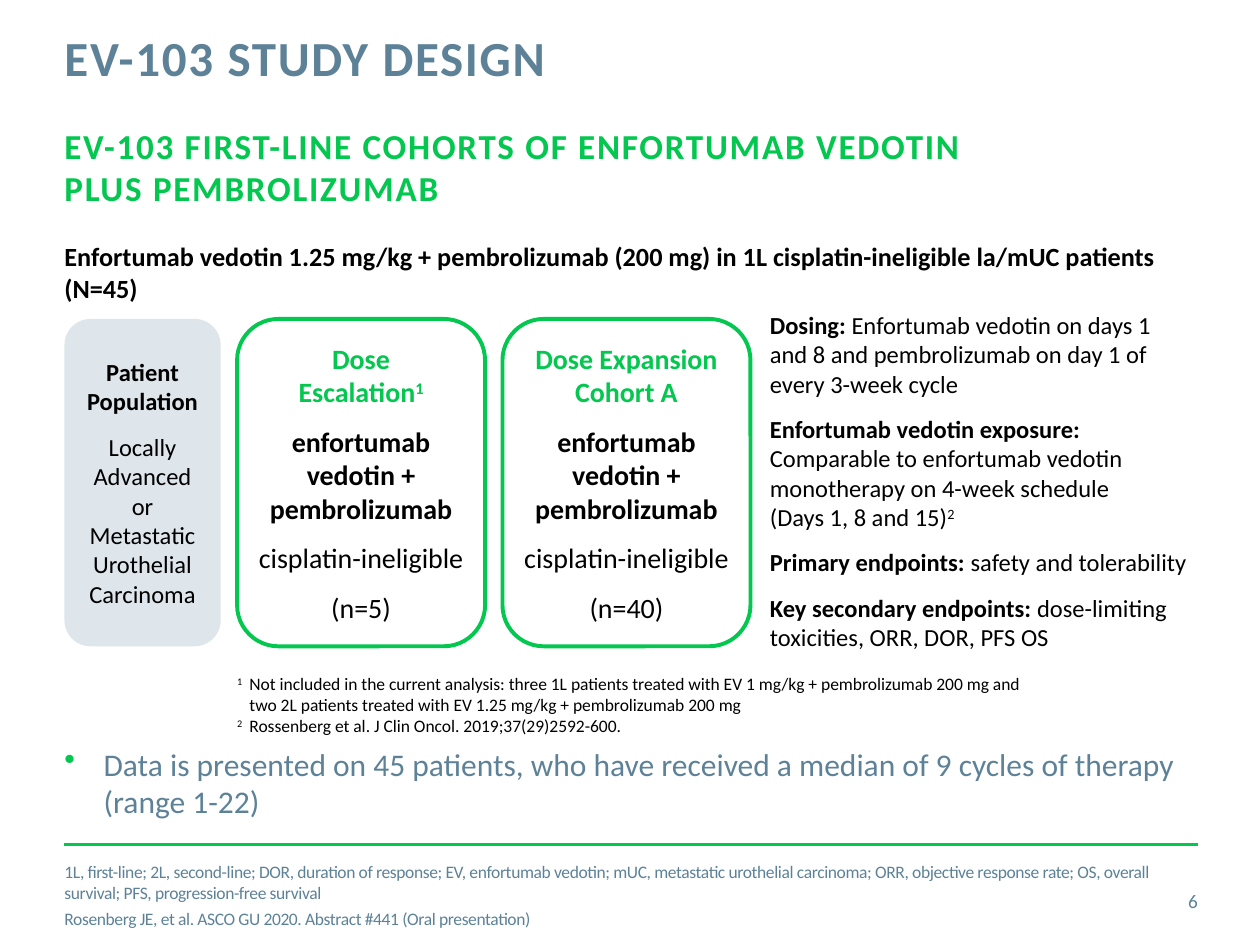
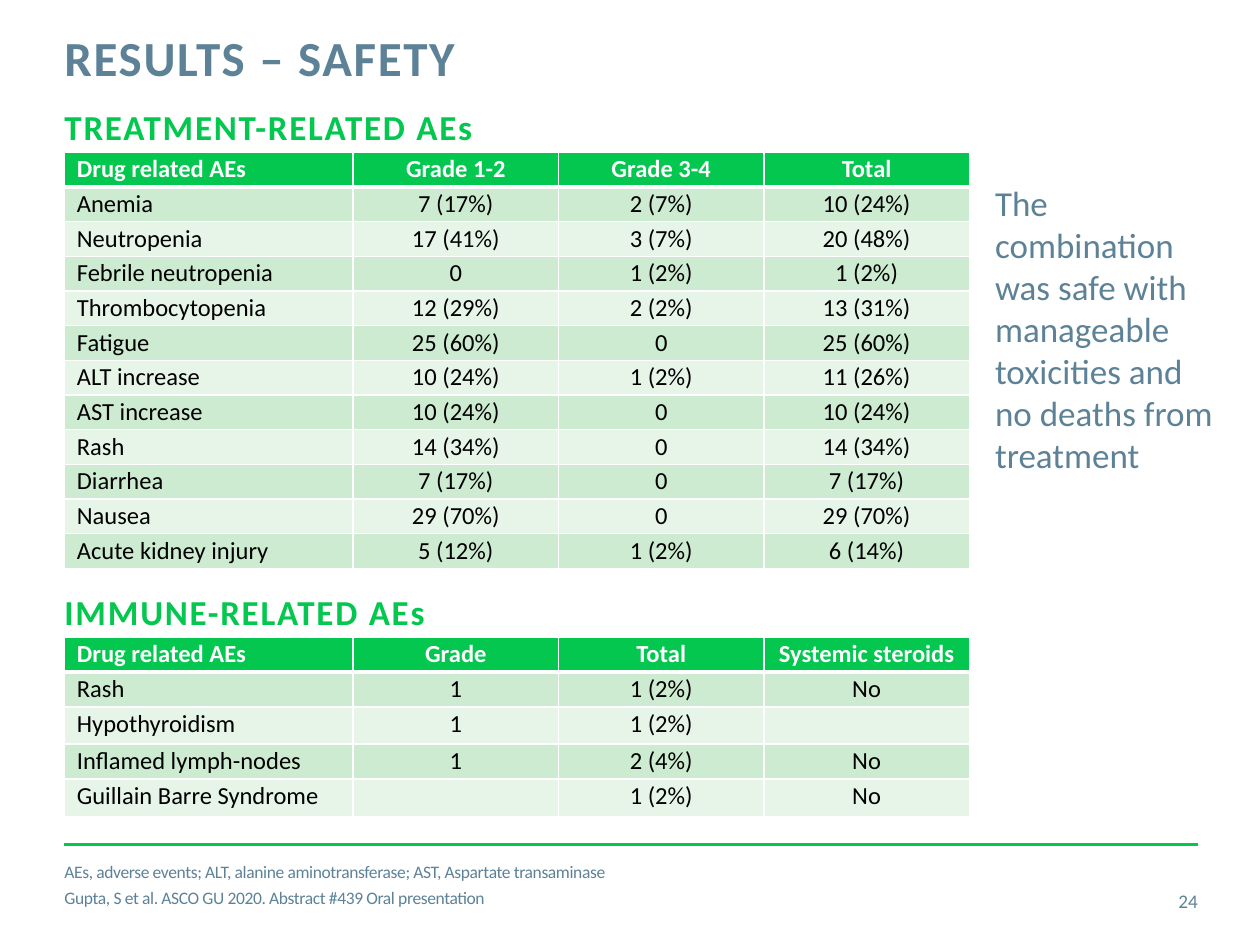
"""Build two study slides: the EV-103 design and its safety results."""
from copy import deepcopy

from lxml.etree import SubElement
from pptx import Presentation
from pptx.dml.color import RGBColor
from pptx.enum.shapes import MSO_CONNECTOR, MSO_SHAPE
from pptx.enum.text import MSO_ANCHOR, PP_ALIGN
from pptx.oxml.ns import qn
from pptx.util import Cm, Pt

GREEN, SLATE, PALE_SLATE = "03C74F", "5D8298", "DEE6EB"
BLACK, WHITE = "000000", "FFFFFF"
BANDS = ["CCEBD0", "E7F5E9"]

LEFT, RIGHT = 1.3, 24.15
TITLE = dict(size=28, color=SLATE, bold=True, spacing=1)
HEADING = dict(size=20, color=GREEN, bold=True, spacing=1)
FOOTNOTE = dict(size=10, color=SLATE, spacing=-0.2)
BOLD, RAISED = dict(bold=True), dict(raised=True)
GREEN_BOLD = dict(bold=True, color=GREEN)

STUDY_LINE = ("Enfortumab vedotin 1.25 mg/kg + pembrolizumab (200 mg) "
              "in 1L cisplatin-ineligible la/mUC patients\n(N=45)")
POPULATION = [
    [("Patient\nPopulation", BOLD)],
    "Locally Advanced\nor\nMetastatic Urothelial\nCarcinoma",
]
COHORTS = [
    ([("Dose\nEscalation", GREEN_BOLD), ("1", GREEN_BOLD | RAISED)], "(n=5)"),
    ([("Dose Expansion\nCohort A", GREEN_BOLD)], "(n=40)"),
]
TREATMENT = [("enfortumab\nvedotin +\npembrolizumab", BOLD)]
DETAILS = [
    [("Dosing: ", BOLD),
     ("Enfortumab vedotin on days 1\nand 8 and pembrolizumab on day 1 of\nevery 3-week cycle", {})],
    [("Enfortumab vedotin exposure:\n", BOLD),
     ("Comparable to enfortumab vedotin\nmonotherapy on 4-week schedule\n(Days 1, 8 and 15)", {}),
     ("2", RAISED)],
    [("Primary endpoints: ", BOLD), ("safety and tolerability", {})],
    [("Key secondary endpoints: ", BOLD),
     ("dose-limiting\ntoxicities, ORR, DOR, PFS OS", {})],
]
STUDY_NOTES = [
    [("1", RAISED),
     ("\tNot included in the current analysis: three 1L patients treated with EV 1 mg/kg + "
      "pembrolizumab 200 mg and\ntwo 2L patients treated with EV 1.25 mg/kg + pembrolizumab 200 mg", {})],
    [("2", RAISED), ("\tRossenberg et al. J Clin Oncol. 2019;37(29)2592-600.", {})],
]
DATA_POINT = ("Data is presented on 45 patients, who have received a median of "
              "9 cycles of therapy (range 1-22)")
DESIGN_FOOTER = [
    "1L, first-line; 2L, second-line; DOR, duration of response; EV, enfortumab vedotin; "
    "mUC, metastatic urothelial carcinoma; ORR, objective response rate; OS, overall survival; "
    "PFS, progression-free survival",
    "Rosenberg JE, et al. ASCO GU 2020. Abstract #441 (Oral presentation)",
]
SAFETY_FOOTER = [
    "AEs, adverse events; ALT, alanine aminotransferase; AST, Aspartate transaminase",
    "Gupta, S et al. ASCO GU 2020. Abstract #439 Oral presentation",
]
CONCLUSION = "The combination was safe with manageable toxicities and no deaths from treatment"
TREATMENT_EVENTS = [
    ("Drug related AEs", "Grade 1-2", "Grade 3-4", "Total"),
    ("Anemia", "7 (17%)", "2 (7%)", "10 (24%)"),
    ("Neutropenia", "17 (41%)", "3 (7%)", "20 (48%)"),
    ("Febrile neutropenia", "0", "1 (2%)", "1 (2%)"),
    ("Thrombocytopenia", "12 (29%)", "2 (2%)", "13 (31%)"),
    ("Fatigue", "25 (60%)", "0", "25 (60%)"),
    ("ALT increase", "10 (24%)", "1 (2%)", "11 (26%)"),
    ("AST increase", "10 (24%)", "0", "10 (24%)"),
    ("Rash", "14 (34%)", "0", "14 (34%)"),
    ("Diarrhea", "7 (17%)", "0", "7 (17%)"),
    ("Nausea", "29 (70%)", "0", "29 (70%)"),
    ("Acute kidney injury", "5 (12%)", "1 (2%)", "6 (14%)"),
]
IMMUNE_EVENTS = [
    ("Drug related AEs", "Grade", "Total", "Systemic steroids"),
    ("Rash", "1", "1 (2%)", "No"),
    ("Hypothyroidism", "1", "1 (2%)", ""),
    ("Inflamed lymph-nodes", "1", "2 (4%)", "No"),
    ("Guillain Barre Syndrome", "", "1 (2%)", "No"),
]
SAFETY_TABLES = [
    ("TREATMENT-RELATED AEs", 2.13, TREATMENT_EVENTS),
    ("IMMUNE-RELATED AEs", 11.91, IMMUNE_EVENTS),
]
COLUMN_WIDTHS = [5.82, 4.14, 4.14, 4.14]


def rgb(value):
    """Turn a hex string into a colour."""
    return RGBColor.from_string(value)


def style_run(run, size, color, bold=False, spacing=0, raised=False):
    """Apply one text style to a run."""
    run.font.name = "Calibri"
    run.font.size = Pt(size)
    run.font.bold = bold
    run.font.color.rgb = rgb(color)
    properties = run.font._element
    if spacing:
        properties.set("spc", str(round(spacing * 100)))
    if raised:
        properties.set("baseline", "30000")


def fill_paragraph(paragraph, content, style):
    """Write a string or a list of styled pieces, with line breaks."""
    pieces = [(content, {})] if isinstance(content, str) else content
    for text, changes in pieces:
        for index, line in enumerate(text.split("\n")):
            if index:
                paragraph.add_line_break()
            if line:
                run = paragraph.add_run()
                run.text = line
                style_run(run, **(style | changes))
    for line_break in paragraph._p.findall(qn("a:br")):
        line_break.append(deepcopy(paragraph.runs[0].font._element))


def write(shape, paragraphs, style, align=PP_ALIGN.LEFT, anchor=MSO_ANCHOR.TOP,
          before=0, after=0, insets=(0, 0)):
    """Write styled paragraphs into a shape; insets are horizontal and vertical."""
    frame = shape.text_frame
    frame.word_wrap = True
    frame.vertical_anchor = anchor
    frame.margin_left = frame.margin_right = Cm(insets[0])
    frame.margin_top = frame.margin_bottom = Cm(insets[1])
    for index, content in enumerate(paragraphs):
        paragraph = frame.add_paragraph() if index else frame.paragraphs[0]
        paragraph.alignment = align
        paragraph.space_before = Pt(before if index else 0)
        paragraph.space_after = Pt(after)
        fill_paragraph(paragraph, content, style)
    return frame.paragraphs


def add_text(slide, box, paragraphs, style, **options):
    """Add a text box, its place given in centimetres."""
    shape = slide.shapes.add_textbox(*map(Cm, box))
    return write(shape, paragraphs, style, **options)


def hang(paragraph, indent, bullet=None):
    """Give a paragraph a hanging indent and perhaps a green bullet."""
    properties = paragraph._p.get_or_add_pPr()
    properties.set("marL", str(Cm(indent)))
    properties.set("indent", str(-Cm(indent)))
    if bullet:
        color = SubElement(properties, qn("a:buClr"))
        SubElement(color, qn("a:srgbClr"), val=GREEN)
        SubElement(properties, qn("a:buChar"), char=bullet)


def add_card(slide, left, width, paragraphs, size, fill, line=None):
    """Add a rounded card of centred text in the study row."""
    card = slide.shapes.add_shape(MSO_SHAPE.ROUNDED_RECTANGLE,
                                  Cm(left), Cm(6.43), Cm(width), Cm(6.6))
    card.shadow.inherit = False
    card.fill.solid()
    card.fill.fore_color.rgb = rgb(fill)
    if line:
        card.line.color.rgb = rgb(line)
        card.line.width = Pt(2.25)
    else:
        card.line.fill.background()
    write(card, paragraphs, dict(size=size, color=BLACK), align=PP_ALIGN.CENTER,
          anchor=MSO_ANCHOR.MIDDLE, after=9, insets=(0, 0.13))


def set_borders(cell, top, bottom):
    """Draw white borders around a cell."""
    properties = cell._tc.get_or_add_tcPr()
    for side, width in (("L", 1), ("R", 1), ("T", top), ("B", bottom)):
        line = SubElement(properties, qn(f"a:ln{side}"), w=str(Pt(width)))
        fill = SubElement(line, qn("a:solidFill"))
        SubElement(fill, qn("a:srgbClr"), val=WHITE)


def add_event_table(slide, top, rows):
    """Add a banded table of adverse events."""
    heights = [0.7 if all(row) else 0.73 for row in rows]
    table = slide.shapes.add_table(len(rows), len(COLUMN_WIDTHS), Cm(LEFT), Cm(top),
                                   Cm(sum(COLUMN_WIDTHS)), Cm(sum(heights))).table
    for column, width in zip(table.columns, COLUMN_WIDTHS):
        column.width = Cm(width)
    for row_index, values in enumerate(rows):
        table.rows[row_index].height = Cm(heights[row_index])
        header = row_index == 0
        style = dict(size=14, color=WHITE if header else BLACK, bold=header)
        for column_index, value in enumerate(values):
            cell = table.cell(row_index, column_index)
            set_borders(cell, 3 if row_index == 1 else 1, 3 if header else 1)
            cell.fill.solid()
            cell.fill.fore_color.rgb = rgb(GREEN if header else BANDS[(row_index - 1) % 2])
            cell.margin_left = cell.margin_right = Cm(0.25)
            cell.margin_top = cell.margin_bottom = Cm(0.08)
            paragraph = cell.text_frame.paragraphs[0]
            paragraph.alignment = PP_ALIGN.CENTER if column_index else PP_ALIGN.LEFT
            paragraph.line_spacing = 0.9
            if value:
                fill_paragraph(paragraph, value, style)
            else:
                SubElement(paragraph._p, qn("a:endParaRPr"), sz="1400")


def add_base_slide(presentation, title, footer, number):
    """Add a slide with the shared title, rule, footer and number."""
    slide = presentation.slides.add_slide(presentation.slide_layouts[5])
    shape = slide.shapes.title
    shape.left, shape.top, shape.width, shape.height = map(Cm, (LEFT, 0.69, 18.2, 1.2))
    write(shape, [title], TITLE)[0].line_spacing = Pt(30)
    rule = slide.shapes.add_connector(MSO_CONNECTOR.STRAIGHT,
                                      Cm(LEFT), Cm(17.02), Cm(RIGHT), Cm(17.02))
    rule.line.color.rgb = rgb(GREEN)
    rule.line.width = Pt(2)
    SubElement(rule._element.spPr, qn("a:effectLst"))
    add_text(slide, (LEFT, 17.35, 22, 1.5), footer, FOOTNOTE, before=3)
    add_text(slide, (RIGHT - 1.63, 17.65, 1.63, 1.02), [number], dict(size=11, color=SLATE),
             align=PP_ALIGN.RIGHT, anchor=MSO_ANCHOR.MIDDLE)
    return slide


def add_design_slide(presentation):
    """Add the study design slide."""
    slide = add_base_slide(presentation, "EV-103 STUDY DESIGN", DESIGN_FOOTER, "6")
    add_text(slide, (LEFT, 2.51, 22.86, 1.96),
             ["EV-103 FIRST-LINE COHORTS OF ENFORTUMAB VEDOTIN\nPLUS PEMBROLIZUMAB"], HEADING)
    add_text(slide, (LEFT, 4.72, 22.86, 1.55), [STUDY_LINE],
             dict(size=15, color=BLACK, bold=True), insets=(0, 0.13))
    add_card(slide, LEFT, 3.15, POPULATION, 14, PALE_SLATE)
    for index, (name, count) in enumerate(COHORTS):
        add_card(slide, 4.78 + index * 5.35, 5, [name, TREATMENT, "cisplatin-ineligible", count],
                 16, WHITE, GREEN)
    add_text(slide, (15.27, 6.12, 9.2, 7.2), DETAILS, dict(size=14, color=BLACK),
             after=9, insets=(0.25, 0.13))
    notes = add_text(slide, (4.78, 13.44, 17, 1.55), STUDY_NOTES, dict(size=10, color=BLACK),
                     insets=(0, 0.13))
    for paragraph in notes:
        hang(paragraph, 0.25)
    point = add_text(slide, (LEFT, 15.01, 22.85, 1.52), [DATA_POINT], dict(size=18, color=SLATE))
    hang(point[0], 0.79, "•")


def add_safety_slide(presentation):
    """Add the safety results slide."""
    slide = add_base_slide(presentation, "RESULTS – SAFETY", SAFETY_FOOTER, "24")
    for heading, top, rows in SAFETY_TABLES:
        add_text(slide, (LEFT, top, 18.2, 0.9), [heading], HEADING)
        add_event_table(slide, top + 0.94, rows)
    add_text(slide, (19.81, 3.53, 4.9, 7.09), [CONCLUSION], dict(size=20, color=SLATE),
             insets=(0.25, 0.13))


def main():
    """Build and save the presentation."""
    presentation = Presentation()
    presentation.slide_width, presentation.slide_height = Cm(25.4), Cm(19.05)
    add_design_slide(presentation)
    add_safety_slide(presentation)
    presentation.save("out.pptx")


if __name__ == "__main__":
    main()
